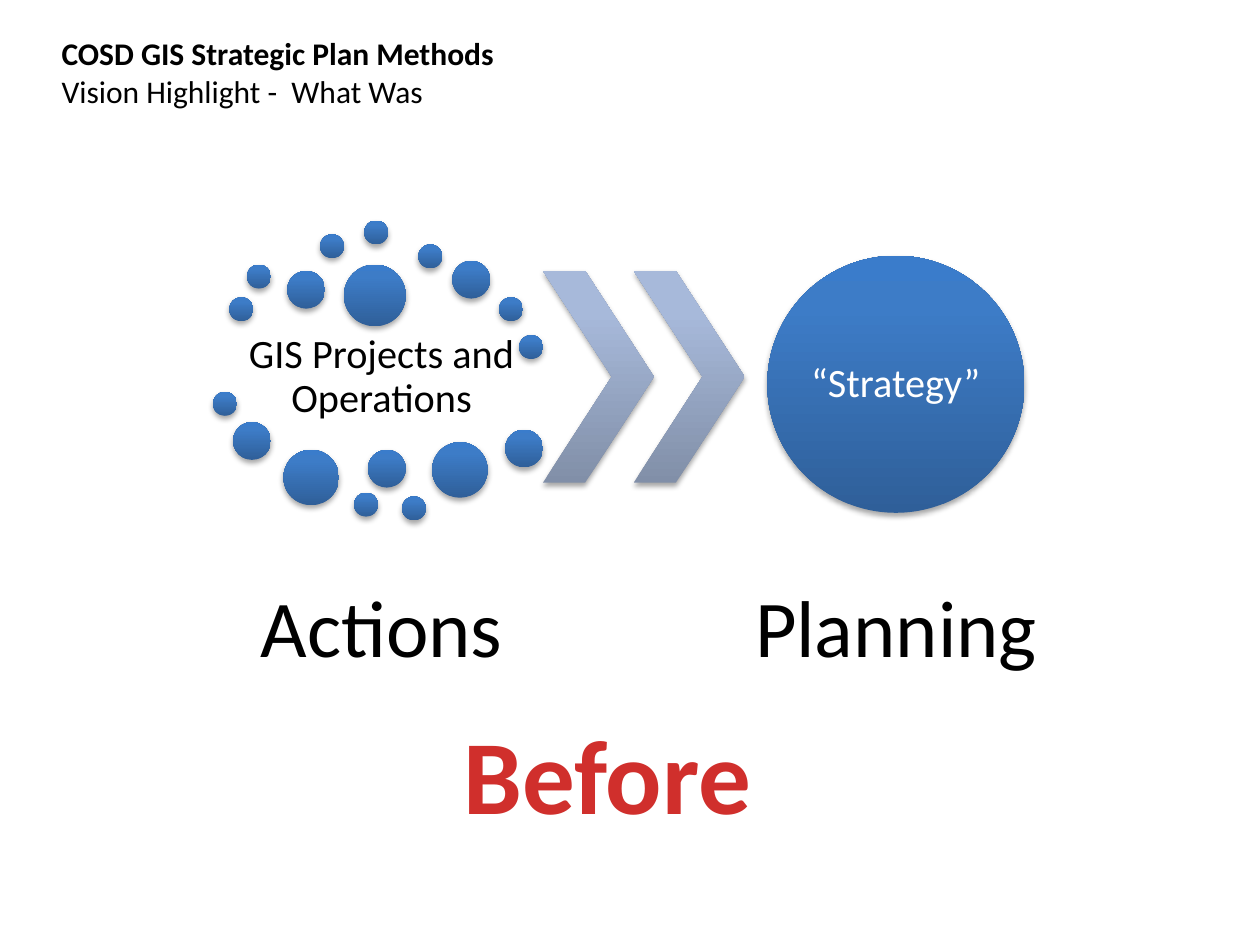
from pptx import Presentation
from pptx.dml.color import RGBColor
from pptx.enum.shapes import MSO_SHAPE
from pptx.enum.text import MSO_ANCHOR, MSO_AUTO_SIZE, PP_ALIGN
from pptx.oxml import parse_xml
from pptx.oxml.ns import nsdecls
from pptx.util import Inches, Pt

ELLIPSE, CHEVRON = MSO_SHAPE.OVAL, MSO_SHAPE.CHEVRON
CENTER, LEFT = PP_ALIGN.CENTER, PP_ALIGN.LEFT
MIDDLE, TOP = MSO_ANCHOR.MIDDLE, MSO_ANCHOR.TOP
FIT_SHAPE = MSO_AUTO_SIZE.SHAPE_TO_FIT_TEXT

FONT = "Calibri"
BLACK, WHITE, RED = "000000", "FFFFFF", "D02F2C"
# Gradient stops from bottom to top: percent, colour
BLUE_STOPS = [(0, "2F5F99"), (80, "3D7CC7"), (100, "3A7CCB")]
PALE_STOPS = [(0, "818FA8"), (80, "A7B9DA"), (100, "A7BADC")]

# Dots grouped by diameter: left and top within the cluster box
DOTS = {
    0.19: [(0.13, 0.61), (0.27, 0.35), (0.85, 0.11), (1.2, 0), (1.63, 0.19),
           (2.27, 0.61), (2.43, 0.91), (0, 1.36), (1.12, 2.16), (1.5, 2.19)],
    0.3: [(0.59, 0.4), (1.9, 0.32), (0.16, 1.6), (1.23, 1.82), (2.32, 1.66)],
    0.44: [(0.56, 1.82), (1.74, 1.76)],
    0.49: [(1.04, 0.35)],
}


def color(hex_string):
    return RGBColor.from_string(hex_string)


def add_shaded_shape(slide, kind, left, top, width, height, stops):
    """Add a preset shape with a vertical gradient and a soft shadow below."""
    shape = slide.shapes.add_shape(
        kind, Inches(left), Inches(top), Inches(width), Inches(height))
    properties = shape._element.spPr
    stop_xml = "".join(
        f'<a:gs pos="{percent * 1000}"><a:srgbClr val="{value}"/></a:gs>'
        for percent, value in stops)
    properties.append(parse_xml(
        f'<a:gradFill {nsdecls("a")} rotWithShape="1"><a:gsLst>{stop_xml}</a:gsLst>'
        '<a:lin ang="16200000" scaled="0"/></a:gradFill>'))
    shape.line.fill.background()
    properties.append(parse_xml(
        f'<a:effectLst {nsdecls("a")}><a:outerShdw blurRad="40000" dist="23000" '
        'dir="5400000" rotWithShape="0"><a:srgbClr val="000000">'
        '<a:alpha val="35000"/></a:srgbClr></a:outerShdw></a:effectLst>'))
    return shape


def add_text(slide, left, top, width, height, lines, size, text_color=BLACK,
             align=CENTER, anchor=MIDDLE, inset=None, spacing=None, wrap=True):
    """Add a text box; each line is a pair of wording and bold flag."""
    box = slide.shapes.add_textbox(
        Inches(left), Inches(top), Inches(width), Inches(height))
    frame = box.text_frame
    frame.word_wrap = wrap
    frame.vertical_anchor = anchor
    if inset is not None:
        frame.margin_left = frame.margin_right = Inches(inset)
        frame.margin_top = frame.margin_bottom = Inches(inset)
    for index, (wording, bold) in enumerate(lines):
        paragraph = frame.add_paragraph() if index else frame.paragraphs[0]
        paragraph.alignment = align
        if spacing:
            paragraph.line_spacing = spacing
        run = paragraph.add_run()
        run.text = wording
        run.font.name = FONT
        run.font.size = Pt(size)
        run.font.bold = bold
        run.font.color.rgb = color(text_color)
    return box


def add_heading(slide, left, top, width, height):
    lines = [("COSD GIS Strategic Plan Methods", True),
             ("Vision Highlight -  What Was", False)]
    box = add_text(slide, left, top, width, height, lines, 18,
                   align=LEFT, anchor=TOP)
    box.text_frame.auto_size = FIT_SHAPE


def add_projects_cluster(slide, left, top):
    # Label ringed by dots
    add_text(slide, left + 0.14, top + 0.85, 2.4, 0.79,
             [("GIS Projects and Operations", False)], 23, inset=0.03, spacing=0.9)
    for diameter, places in DOTS.items():
        for dot_left, dot_top in places:
            add_shaded_shape(slide, ELLIPSE, left + dot_left, top + dot_top,
                             diameter, diameter, BLUE_STOPS)


def add_chevrons(slide, left, top, width, height, pitch):
    for index in range(2):
        chevron = add_shaded_shape(slide, CHEVRON, left + index * pitch, top,
                                   width, height, PALE_STOPS)
        chevron.adjustments[0] = 0.62


def add_strategy_circle(slide, left, top, diameter):
    add_shaded_shape(slide, ELLIPSE, left, top, diameter, diameter, BLUE_STOPS)
    margin = 0.3
    inner = diameter - 2 * margin
    add_text(slide, left + margin, top + margin, inner, inner,
             [("“Strategy”", False)], 23, WHITE, inset=0, spacing=0.9)


def add_captions(slide, top, width, height):
    for left, wording in [(1.83, "Actions"), (5.91, "Planning")]:
        add_text(slide, left, top, width, height, [(wording, False)], 46,
                 inset=0.06, spacing=0.9)


def add_verdict(slide, left, top, width, height):
    box = add_text(slide, left, top, width, height, [("Before", True)], 60, RED,
                   align=LEFT, anchor=TOP, wrap=False)
    box.text_frame.auto_size = FIT_SHAPE


def main():
    presentation = Presentation()
    presentation.slide_width = Inches(10)
    presentation.slide_height = Inches(7.5)
    slide = presentation.slides.add_slide(presentation.slide_layouts[6])

    add_heading(slide, 0.39, 0.22, 4.36, 0.71)
    add_projects_cluster(slide, 1.69, 1.75)
    add_chevrons(slide, 4.31, 2.15, 0.88, 1.68, pitch=0.72)
    add_strategy_circle(slide, 6.09, 2.03, 2.04)
    add_captions(slide, 4.27, 2.4, 1.48)
    add_verdict(slide, 3.58, 5.58, 2.51, 1.11)

    presentation.save("out.pptx")


if __name__ == "__main__":
    main()
